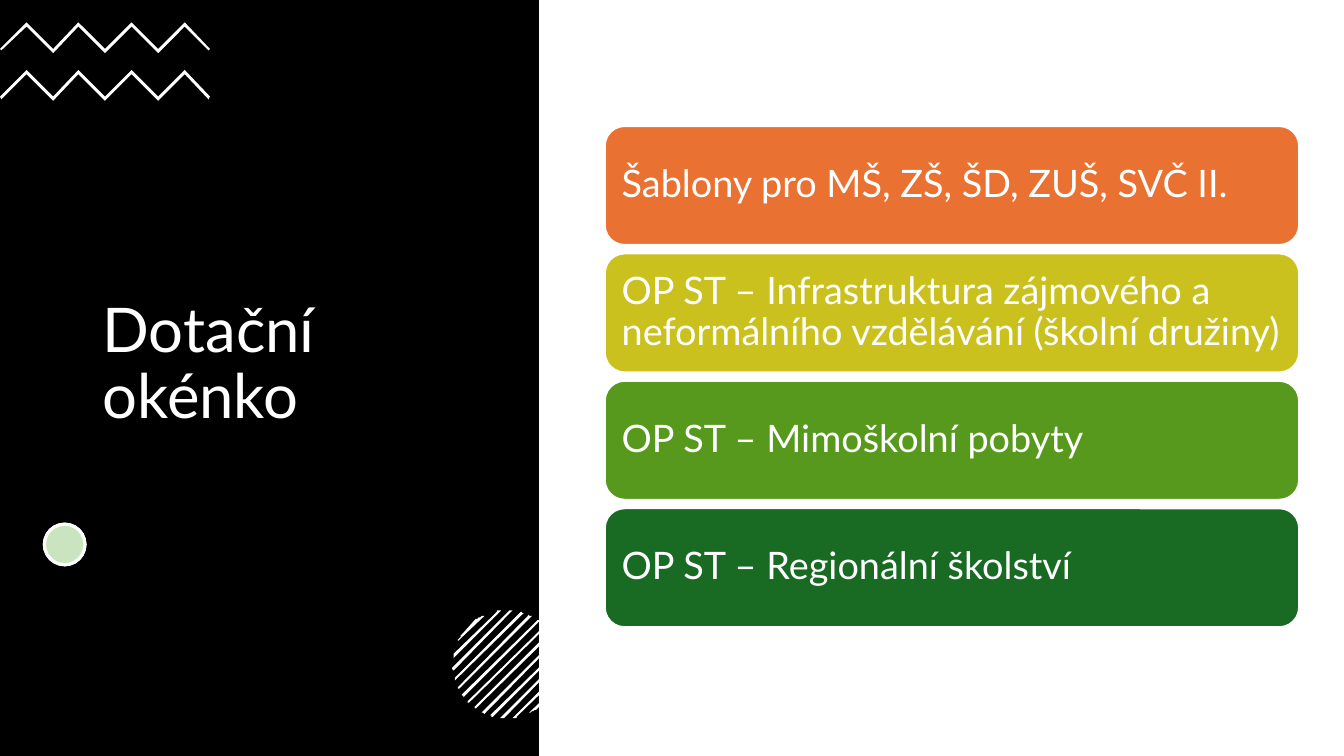
"""Build a slide with a dark title panel and four coloured topic bars."""
from math import acos, cos, pi, sin

from lxml import etree
from pptx import Presentation
from pptx.dml.color import RGBColor
from pptx.enum.shapes import MSO_SHAPE
from pptx.enum.text import MSO_ANCHOR, PP_ALIGN
from pptx.oxml.ns import qn
from pptx.util import Pt

RECT, OVAL, ROUND = MSO_SHAPE.RECTANGLE, MSO_SHAPE.OVAL, MSO_SHAPE.ROUNDED_RECTANGLE
MIDDLE, LEFT = MSO_ANCHOR.MIDDLE, PP_ALIGN.LEFT

FONT, WHITE, BLACK, GREEN = "Lato", "FFFFFF", "000000", "4EA72E"
TITLE = "Dotační okénko"
TOPICS = [
    ("Šablony pro MŠ, ZŠ, ŠD, ZUŠ, SVČ II.", "E97132"),
    ("OP ST – Infrastruktura zájmového a neformálního vzdělávání (školní družiny)", "CBC11E"),
    ("OP ST – Mimoškolní pobyty", "56991D"),
    ("OP ST – Regionální školství", "196B24"),
]
BAR_X, BAR_Y, BAR_W, BAR_H, BAR_STEP = 432, 90, 496, 85, 91
ZIG_TOPS, ZIG_STEP, ZIG_TURNS = (15.8, 50.3), 18.8, 8
DISC_X, DISC_Y, DISC_R = 361.9, 474.5, 38.6
STRIPE_STEP, STRIPE_HALF, STRIPE_SIDE = 6.2, 0.9, 6
ARC_STEPS = 6


def color(code):
    return RGBColor.from_string(code)


def paint(shape, fill, line=None, width=0):
    shape.shadow.inherit = False
    shape.fill.solid()
    shape.fill.fore_color.rgb = color(fill)
    if line:
        shape.line.color.rgb = color(line)
        shape.line.width = Pt(width)
    else:
        shape.line.fill.background()
    return shape


def add_form(kind, x, y, w, h, fill, line=None, width=0):
    shape = slide.shapes.add_shape(kind, Pt(x), Pt(y), Pt(w), Pt(h))
    return paint(shape, fill, line, width)


def add_poly(points):
    form = slide.shapes.build_freeform(*points[0], scale=Pt(1))
    form.add_line_segments(points[1:])
    paint(form.convert_to_shape(), WHITE)


def write(shape, text, size):
    frame = shape.text_frame
    frame.word_wrap = True
    frame.vertical_anchor = MIDDLE
    frame.text = text
    para = frame.paragraphs[0]
    para.alignment = LEFT
    para.line_spacing = 0.9
    font = para.runs[0].font
    font.name, font.size = FONT, Pt(size)
    font.color.rgb = color(WHITE)
    return frame


def add_zigzag(top):
    upper = [(i * ZIG_STEP, top + (0 if i % 2 else 19)) for i in range(ZIG_TURNS + 1)]
    lower = [(x, y + 2.8) for x, y in upper[1:-1]]
    (x0, y0), (x1, y1) = upper[0], upper[-1]
    add_poly(upper + [(x1 - 1.4, y1 + 1.4)] + lower[::-1] + [(x0 + 1.4, y0 + 1.4)])


def add_stripe(dist):
    near = acos((dist - STRIPE_HALF) / DISC_R)
    far = acos((dist + STRIPE_HALF) / DISC_R)
    arc = [near + (far - near) * i / ARC_STEPS for i in range(ARC_STEPS + 1)]
    turns = [pi / 4 + a for a in arc] + [pi / 4 - a for a in reversed(arc)]
    add_poly([(DISC_X + DISC_R * cos(t), DISC_Y + DISC_R * sin(t)) for t in turns])


deck = Presentation()
deck.slide_width, deck.slide_height = Pt(960), Pt(540)
slide = deck.slides.add_slide(deck.slide_layouts[6])

add_form(RECT, 0, 0, 385, 540, BLACK)
title = slide.shapes.add_textbox(Pt(66.2), Pt(94.3), Pt(252), Pt(333.4))
write(title, TITLE, 44)

for top in ZIG_TOPS:
    add_zigzag(top)

for fill in (WHITE, GREEN):
    dot = add_form(OVAL, 31.7, 374.4, 29, 29, fill, WHITE, 2.25)
tint = dot.fill._xPr.find(qn("a:solidFill"))[0]
etree.SubElement(tint, qn("a:alpha")).set("val", "30000")

for k in range(-STRIPE_SIDE, STRIPE_SIDE + 1):
    add_stripe(k * STRIPE_STEP)

for i, (text, fill) in enumerate(TOPICS):
    bar = add_form(ROUND, BAR_X, BAR_Y + i * BAR_STEP, BAR_W, BAR_H, fill, WHITE, 1.5)
    frame = write(bar, text, 27)
    frame.margin_left = frame.margin_top = frame.margin_bottom = Pt(8)
    frame.margin_right = Pt(6)

deck.save("out.pptx")
